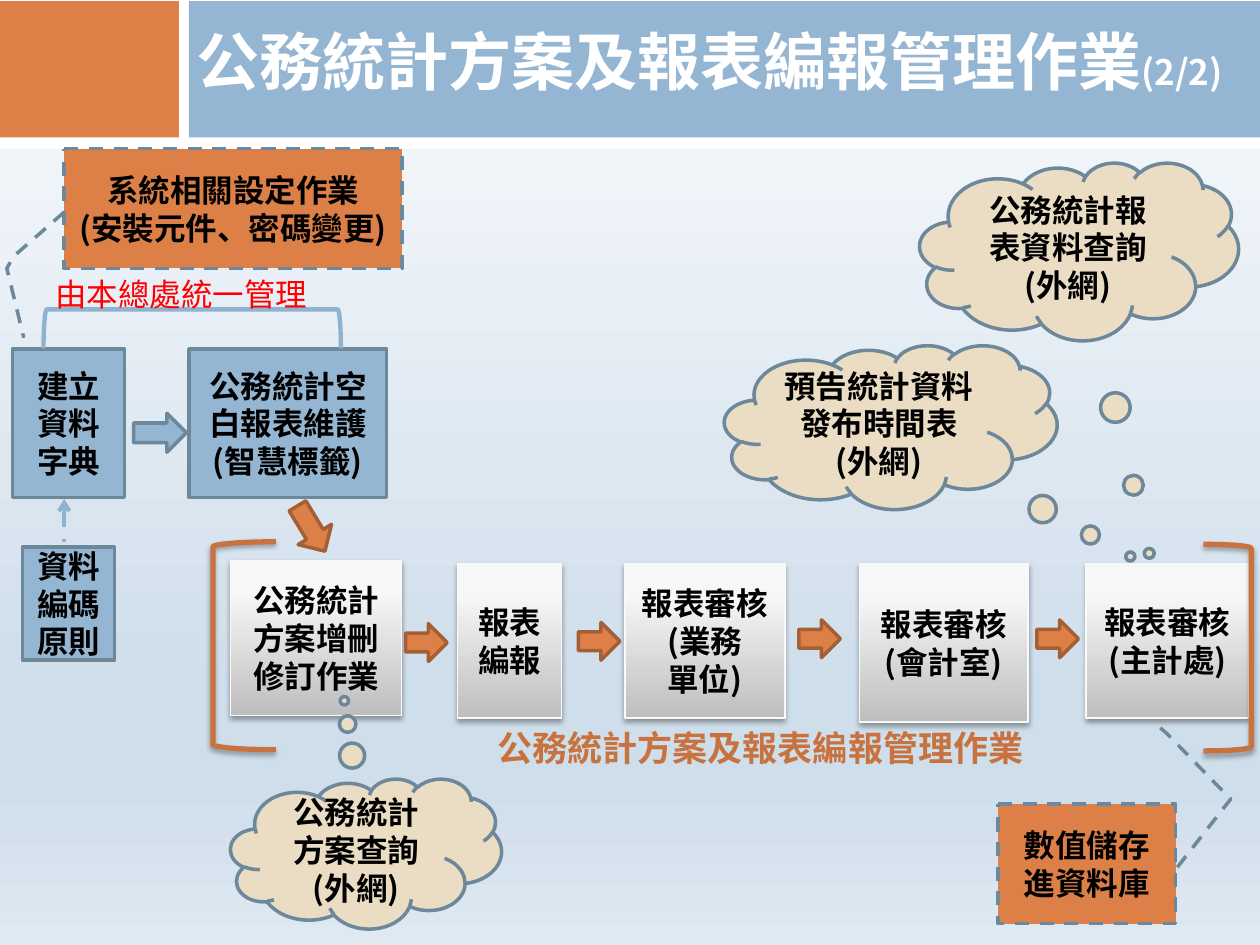
"""Build the slide on managing statistical programmes and report compilation."""
from dataclasses import dataclass

from pptx import Presentation
from pptx.dml.color import RGBColor
from pptx.enum.dml import MSO_LINE
from pptx.enum.shapes import MSO_CONNECTOR, MSO_SHAPE as Form
from pptx.enum.text import MSO_ANCHOR, PP_ALIGN
from pptx.oxml import parse_xml
from pptx.oxml.ns import nsdecls, qn
from pptx.oxml.xmlchemy import OxmlElement
from pptx.util import Inches, Pt

FONT = "Noto Sans CJK SC"
WHITE, BLACK, RED = "FFFFFF", "000000", "FF0000"
ORANGE, BLUE, SAND, RUST, SKY, SLATE = "DD8047", "94B6D2", "EBDDC3", "C8733F", "8FB2CF", "6D879B"
SILVER = ((0, "BEBEBE"), (80, "F7F7F7"), (100, "F8F8F8"))
BACKDROP = ((0, "FAFBFD"), (74, "CFDEEB"), (83, "CFDEEB"), (100, "DFE9F2"))


@dataclass(frozen=True)
class Look:
    fill: str = ""
    line: str = ""
    weight: float = 2
    dashed: bool = False
    silver: bool = False
    shadow: bool = False


@dataclass(frozen=True)
class Item:
    form: Form
    look: Look
    at: tuple[float, float, float, float]
    text: str = ""
    adjust: tuple[float, ...] = ()
    turn: float = 0


@dataclass(frozen=True)
class Label:
    at: tuple[float, float, float, float]
    spans: tuple[tuple[str, float], ...]
    color: str
    bold: bool = True
    wrap: bool = True


ORANGE_BAND, BLUE_BAND, WHITE_BAND = Look(ORANGE), Look(BLUE), Look(WHITE)
REPORT = Look(line="F9F9F9", weight=0.75, silver=True, shadow=True)
STEP = Look(ORANGE, "A35F35")
CLOUD = Look(SAND, SLATE)
NOTE = Look(ORANGE, SLATE, dashed=True)
SETUP = Look(BLUE, SLATE)
SETUP_BRACKET = Look(line=SKY, weight=2.5)
FLOW_BRACKET = Look(line=RUST, weight=3, shadow=True)


def step(left: float, top: float) -> Item:
    return Item(Form.RIGHT_ARROW, STEP, (left, top, 0.33, 0.3))


def report(left: float, width: float, text: str, top: float = 4.47, height: float = 1.23) -> Item:
    return Item(Form.RECTANGLE, REPORT, (left, top, width, height), text)


ITEMS = (
    Item(Form.RECTANGLE, WHITE_BAND, (0, -0.07, 10, 1.25)),
    Item(Form.RECTANGLE, ORANGE_BAND, (0, 0.01, 1.42, 1.08)),
    Item(Form.RECTANGLE, BLUE_BAND, (1.5, 0.01, 8.5, 1.08)),
    report(1.83, 1.36, "公務統計方案增刪修訂作業", top=4.45),
    step(3.22, 4.95),
    report(3.63, 0.83, "報表編報"),
    report(4.96, 1.27, "報表審核\n(業務\n單位)"),
    Item(Form.CLOUD_CALLOUT, CLOUD, (5.75, 2.74, 2.64, 1.3),
         "預告統計資料發布時間表\n(外網)", (0.72, 0.79)),
    Item(Form.CLOUD_CALLOUT, CLOUD, (1.83, 6.18, 2.15, 1.19),
         "公務統計方案查詢\n(外網)", (-0.08, -1.02)),
    step(4.59, 4.94),
    Item(Form.LINE_CALLOUT_3, NOTE, (0.51, 1.18, 2.68, 0.95),
         "系統相關設定作業\n(安裝元件、密碼變更)",
         (0.53, 0, 0.9, -0.15, 1, -0.17, 1.58, -0.12)),
    step(6.34, 4.92),
    report(6.82, 1.34, "報表審核\n(會計室)", height=1.26),
    step(8.23, 4.92),
    report(8.62, 1.29, "報表審核\n(主計處)"),
    Item(Form.LINE_CALLOUT_3, NOTE, (7.92, 6.38, 1.41, 0.95), "數值儲存\n進資料庫",
         (0.53, 1.01, -0.04, 1.31, -0.59, 0.95, -0.69, 0.87)),
    Item(Form.RECTANGLE, SETUP, (0.1, 2.77, 0.89, 1.18), "建立\n資料字典"),
    Item(Form.RIGHT_ARROW, SETUP, (1.06, 3.28, 0.42, 0.31)),
    Item(Form.RECTANGLE, SETUP, (1.5, 2.77, 1.57, 1.18), "公務統計空白報表維護\n(智慧標籤)"),
    Item(Form.LEFT_BRACKET, SETUP_BRACKET, (1.37, 1.43, 0.31, 2.36), turn=90),
    Item(Form.RECTANGLE, SETUP, (0.18, 4.34, 0.73, 0.9), "資料編碼原則"),
    Item(Form.RIGHT_ARROW, STEP, (2.26, 4.04, 0.42, 0.31), turn=58.8),
    Item(Form.CLOUD_CALLOUT, CLOUD, (7.3, 1.29, 2.53, 1.41),
         "公務統計報表資料查詢\n(外網)", (0.22, 1.7)),
    Item(Form.LEFT_BRACKET, FLOW_BRACKET, (1.69, 4.3, 0.5, 1.65)),
    Item(Form.RIGHT_BRACKET, FLOW_BRACKET, (9.55, 4.32, 0.38, 1.64)),
)
LABELS = (
    Label((1.46, 0.13, 8.47, 1.31), (("公務統計方案及報表編報管理作業", 36), ("(2/2)", 20)), WHITE),
    Label((0.34, 2.13, 3.07, 0.4), (("由本總處統一管理", 18),), RED, bold=False),
    Label((3.85, 5.72, 4.41, 0.44), (("公務統計方案及報表編報管理作業", 20),), RUST, wrap=False),
)


def paint(color_format, value: str) -> None:
    color_format.rgb = RGBColor.from_string(value)


def set_gradient(fill, holder, stops: tuple, degrees: int) -> None:
    fill.gradient()
    old = next(holder.iter(qn("a:gradFill")))
    marks = "".join(f'<a:gs pos="{place * 1000}"><a:srgbClr val="{color}"/></a:gs>'
                    for place, color in stops)
    old.getparent().replace(old, parse_xml(
        f'<a:gradFill {nsdecls("a")} rotWithShape="1"><a:gsLst>{marks}</a:gsLst>'
        f'<a:lin ang="{degrees * 60000}" scaled="0"/></a:gradFill>'))


def style_span(span, size: float, color: str, bold: bool = True) -> None:
    span.font.size, span.font.bold, span.font.name = Pt(size), bold, FONT
    paint(span.font.color, color)
    east_asian = OxmlElement("a:ea")
    east_asian.set("typeface", FONT)
    span.font._element.find(qn("a:latin")).addnext(east_asian)


def draw_item(page, item: Item) -> None:
    box = page.shapes.add_shape(item.form, *map(Inches, item.at))
    look = item.look
    box.rotation = item.turn
    for index, value in enumerate(item.adjust):
        box.adjustments[index] = value
    if look.silver:
        set_gradient(box.fill, box.element.spPr, SILVER, 270)
    elif look.fill:
        box.fill.solid()
        paint(box.fill.fore_color, look.fill)
    else:
        box.fill.background()
    if look.line:
        paint(box.line.color, look.line)
        box.line.width = Pt(look.weight)
    else:
        box.line.fill.background()
    if look.dashed:
        box.line.dash_style = MSO_LINE.DASH
    box.shadow.inherit = False
    if look.shadow:
        box.element.spPr.find(qn("a:effectLst")).append(parse_xml(
            f'<a:outerShdw {nsdecls("a")} blurRad="{Pt(3.1)}" dist="{Pt(1.8)}" dir="5400000" '
            f'rotWithShape="0"><a:srgbClr val="{BLACK}"><a:alpha val="35000"/></a:srgbClr>'
            '</a:outerShdw>'))
    if item.text:
        box.text_frame.text = item.text
        box.text_frame.vertical_anchor = MSO_ANCHOR.MIDDLE
        for para in box.text_frame.paragraphs:
            para.alignment = PP_ALIGN.CENTER
            for span in para.runs:
                style_span(span, 18, BLACK)


def draw_label(page, label: Label) -> None:
    frame = page.shapes.add_textbox(*map(Inches, label.at)).text_frame
    frame.word_wrap = label.wrap
    for text, size in label.spans:
        span = frame.paragraphs[0].add_run()
        span.text = text
        style_span(span, size, label.color, label.bold)


def draw_code_link(page) -> None:
    link = page.shapes.add_connector(
        MSO_CONNECTOR.STRAIGHT, *map(Inches, (0.51, 3.96, 0.51, 4.3)))
    paint(link.line.color, SKY)
    link.line.width, link.line.dash_style = Pt(2.25), MSO_LINE.DASH
    head = OxmlElement("a:headEnd")
    head.set("type", "arrow")
    link.line._get_or_add_ln().append(head)
    link._element.spPr.append(OxmlElement("a:effectLst"))


def main() -> None:
    deck = Presentation()
    deck.slide_width, deck.slide_height = Inches(10), Inches(7.5)
    page = deck.slides.add_slide(deck.slide_layouts[6])
    set_gradient(page.background.fill, page.element, BACKDROP, 90)
    for item in ITEMS:
        draw_item(page, item)
    draw_code_link(page)
    for label in LABELS:
        draw_label(page, label)
    deck.save("out.pptx")


if __name__ == "__main__":
    main()
